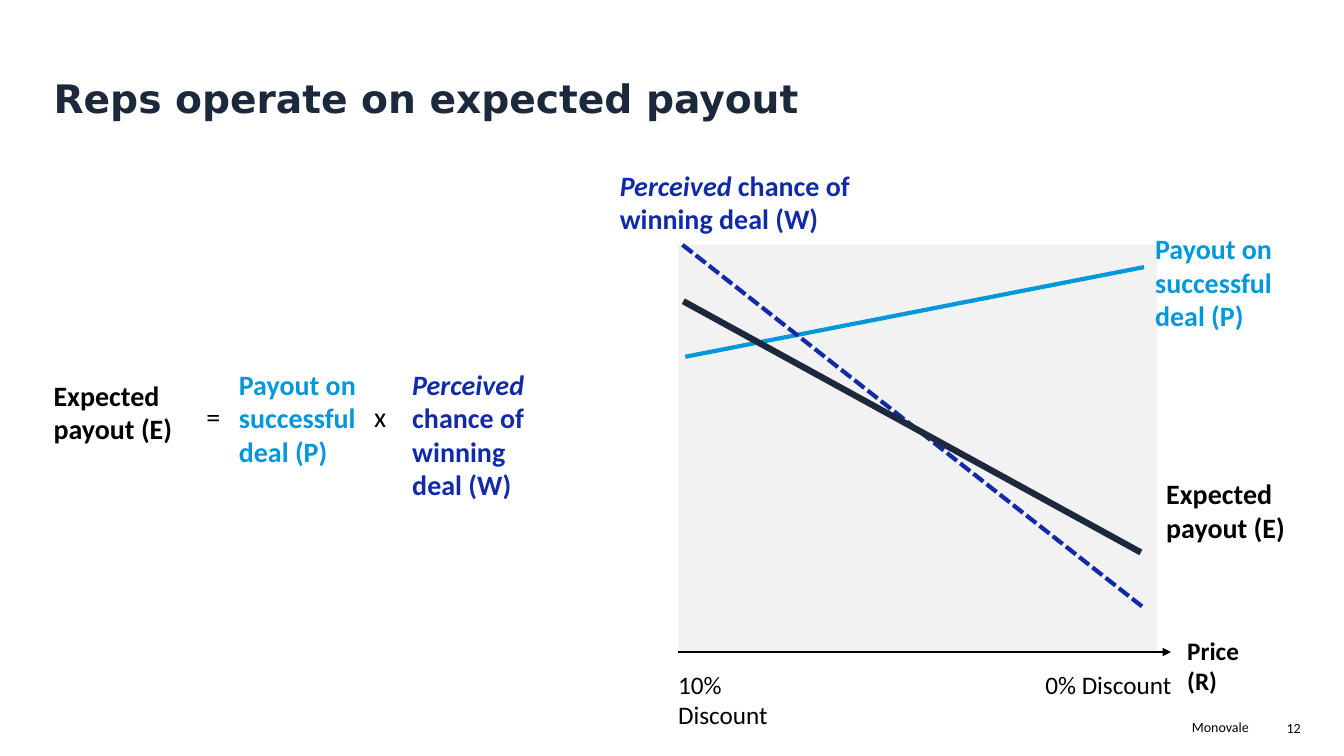
from pptx import Presentation
from pptx.dml.color import RGBColor
from pptx.enum.dml import MSO_LINE_DASH_STYLE as Dash
from pptx.enum.shapes import MSO_CONNECTOR as Link, MSO_SHAPE as Shape
from pptx.enum.text import MSO_ANCHOR as Anchor, MSO_AUTO_SIZE as Fit, PP_ALIGN as Align
from pptx.oxml.ns import qn
from pptx.util import Cm, Pt
from lxml.etree import SubElement

NAVY, SKY, BLUE, BLACK, GREY = "1C293C", "0098DB", "112BA8", "000000", "F2F2F2"
LEFT, TOP, BASE = 17.09, 6.17, 16.43
color = RGBColor.from_string


def write(frame, text, look, lead="", align=Align.LEFT):
    """Fill a frame with one paragraph, its lead in italics."""
    frame.word_wrap = True
    frame.auto_size = Fit.NONE
    for side in ("left", "right", "top", "bottom"):
        setattr(frame, f"margin_{side}", 0)
    para = frame.paragraphs[0]
    para.alignment = align
    for part in filter(None, (lead, text)):
        run = para.add_run()
        run.text = part
        font = {"name": "Calibri", "italic": part == lead} | look
        run.font.color.rgb = color(font.pop("color"))
        for key, value in font.items():
            setattr(run.font, key, value)
    return para


deck = Presentation()
deck.slide_width, deck.slide_height = Cm(33.87), Cm(19.05)
slide = deck.slides.add_slide(deck.slide_layouts[5])
shapes = slide.shapes

title = shapes.title
title.left, title.top, title.width, title.height = Cm(1.35), Cm(1.3), Cm(31.17), Cm(1.77)
head = write(title.text_frame, "Reps operate on expected payout",
             {"name": "DejaVu Sans", "size": Pt(28), "bold": True, "color": NAVY})
head.line_spacing = 0.9
title.text_frame.vertical_anchor = Anchor.BOTTOM

plot = shapes.add_shape(Shape.RECTANGLE, Cm(LEFT), Cm(TOP), Cm(12.07), Cm(BASE - TOP))
plot.shadow.inherit = False
plot.fill.solid()
plot.fill.fore_color.rgb = color(GREY)
plot.line.fill.background()

# Axis, then payout, chance and expected payout
lines = [
    (LEFT, BASE, 29.51, BASE, BLACK, 1.5, None),
    (17.27, 8.99, 28.83, 6.73, SKY, 3, None),
    (17.2, TOP, 28.83, 15.32, BLUE, 3, Dash.SQUARE_DOT),
    (17.22, 7.59, 28.75, 13.92, NAVY, 4.5, None),
]
for *ends, tint, width, dash in lines:
    link = shapes.add_connector(Link.STRAIGHT, *map(Cm, ends))
    link.line.color.rgb = color(tint)
    link.line.width = Pt(width)
    if dash:
        link.line.dash_style = dash
    props = link._element.spPr
    if tint == BLACK:
        SubElement(props.find(qn("a:ln")), qn("a:tailEnd"), type="triangle")
    SubElement(props, qn("a:effectLst"))

payout = ("", "Payout on successful deal (P)", SKY)
chance = ("Perceived", " chance of winning deal (W)", BLUE)
expect = ("", "Expected payout (E)", BLACK)
labels = [
    (29.92, 16, 1.88, 0.89, "", "Price (R)", BLACK, 18, True, Align.LEFT),
    (26.19, 16.87, 3.33, 0.89, "", "0% Discount", BLACK, 18, False, Align.RIGHT),
    (LEFT, 16.87, 3.18, 0.89, "", "10% Discount", BLACK, 18, False, Align.LEFT),
    (29.11, 5.84, 4.29, 2.57, *payout, 20, True, Align.LEFT),
    (15.62, 4.24, 5.94, 1.7, *chance, 20, True, Align.LEFT),
    (29.39, 12.01, 4.4, 1.7, *expect, 20, True, Align.LEFT),
    (1.35, 9.53, 4.04, 1.7, *expect, 20, True, Align.LEFT),
    (4.72, 10.06, 1.32, 0.86, "", "=", BLACK, 20, False, Align.CENTER),
    (6.02, 9.25, 4.29, 2.57, *payout, 20, True, Align.LEFT),
    (8.92, 10.06, 1.32, 0.86, "", "x", BLACK, 20, False, Align.CENTER),
    (10.39, 9.25, 3.48, 3.43, *chance, 20, True, Align.LEFT),
    (23.39, 18.11, 8.08, 0.43, "", "Monovale", BLACK, 10, False, Align.RIGHT),
    (30.1, 18.14, 2.68, 0.43, "", "12", BLACK, 10, False, Align.RIGHT),
]
for *area, lead, text, tint, size, bold, align in labels:
    box = shapes.add_textbox(*map(Cm, area))
    look = {"size": Pt(size), "bold": bold, "color": tint}
    write(box.text_frame, text, look, lead, align)

deck.save("out.pptx")
